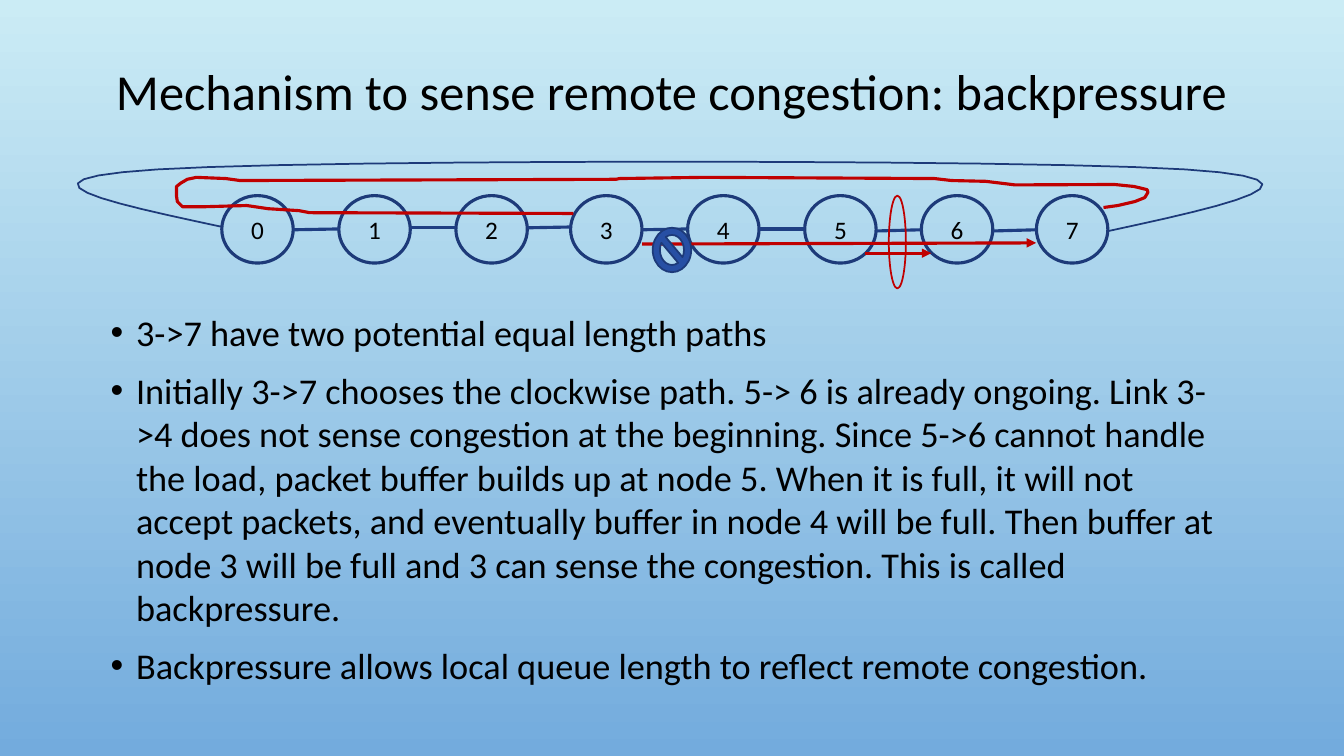
from dataclasses import dataclass

from lxml import etree
from pptx import Presentation, util as u
from pptx.dml.color import RGBColor
from pptx.enum import shapes, text
from pptx.oxml import ns

NAVY = RGBColor(0x1D, 0x3A, 0x79)
LINK_BLUE = RGBColor(0x1F, 0x3F, 0x83)
SIGN_BLUE = RGBColor(0x27, 0x4F, 0xA4)
RED = RGBColor(0xC0, 0x00, 0x00)
BLACK = RGBColor(0, 0, 0)
SKY_TOP = RGBColor(0xCB, 0xEC, 0xF5)
SKY_BOTTOM = RGBColor(0x73, 0xAB, 0xDD)

FONT = "Calibri"
THICK, THIN = 2.25, 1.25
NODE_LEFTS = [5.59, 8.54, 11.49, 14.38, 17.33, 20.28, 23.22, 26.12]
NODE_TOP, NODE_W, NODE_H = 4.93, 1.8, 1.7

Point = tuple[float, float]


@dataclass
class Box:
    left: float
    top: float
    width: float
    height: float

    def lengths(self) -> list[u.Length]:
        return [u.Cm(v) for v in (self.left, self.top, self.width, self.height)]


@dataclass
class Line:
    start: Point
    end: Point
    color: RGBColor
    arrow: bool = False


TITLE = "Mechanism to sense remote congestion: backpressure"
BULLETS = [
    "3->7 have two potential equal length paths",
    "Initially 3->7 chooses the clockwise path. 5-> 6 is already ongoing. "
    "Link 3->4 does not sense congestion at the beginning. Since 5->6 cannot "
    "handle the load, packet buffer builds up at node 5. When it is full, it "
    "will not accept packets, and eventually buffer in node 4 will be full. "
    "Then buffer at node 3 will be full and 3 can sense the congestion. "
    "This is called backpressure.",
    "Backpressure allows local queue length to reflect remote congestion.",
]

# Start and end heights of the links between neighbouring nodes
LINK_HEIGHTS = [(5.79, 5.77), (5.74, 5.74), (5.74, 5.72), (5.79, 5.77),
                (5.77, 5.77), (5.82, 5.79), (5.82, 5.79)]
FLOWS = [
    Line((16.18, 6.15), (26.11, 6.12), RED, arrow=True),
    Line((21.79, 6.38), (23.47, 6.38), RED, arrow=True),
]

WRAP_START: Point = (27.94, 5.82)
WRAP_CURVES: list[tuple[Point, Point, Point]] = [
    ((30.91, 5.18), (33.88, 4.52), (29.87, 4.27)),
    ((25.88, 4.01), (8.03, 4.01), (3.96, 4.27)),
    ((-0.08, 4.52), (2.77, 5.11), (5.61, 5.72)),
]
ALTERNATE_ROUTE: list[Point] = [
    (14.45, 5.38), (7.8, 5.36), (7.54, 5.31), (6.76, 5.26), (6.22, 5.18),
    (5.16, 5.21), (4.6, 5.21), (4.47, 5.08), (4.45, 4.95), (4.45, 4.7),
    (4.55, 4.62), (4.72, 4.52), (4.95, 4.47), (5.69, 4.5), (6.05, 4.55),
    (15.52, 4.52), (15.62, 4.5), (17.75, 4.47), (23.55, 4.5), (23.98, 4.55),
    (24.84, 4.57), (25.58, 4.66), (28.09, 4.65), (28.58, 4.7), (28.91, 4.78),
    (28.93, 4.85), (28.85, 4.98), (28.6, 5.08), (28.17, 5.18), (27.81, 5.23),
]


def style_font(p, size: float) -> None:
    p.font.name, p.font.size = FONT, u.Pt(size)
    p.font.color.rgb = BLACK


def outline(sp, color: RGBColor, width: float, fill: RGBColor | None = None) -> None:
    sp.shadow.inherit = False
    if fill is None:
        sp.fill.background()
    else:
        sp.fill.solid()
        sp.fill.fore_color.rgb = fill
    sp.line.color.rgb = color
    sp.line.width = u.Pt(width)


def add_preset(s, kind, box: Box, color: RGBColor, width: float, fill: RGBColor | None = None):
    sp = s.shapes.add_shape(kind, *box.lengths())
    outline(sp, color, width, fill)
    return sp


def add_line(s, line: Line) -> None:
    c = s.shapes.add_connector(shapes.MSO_CONNECTOR.STRAIGHT,
                               *(u.Cm(v) for v in line.start + line.end))
    c.line.color.rgb = line.color
    c.line.width = u.Pt(THICK)
    sp_pr = c._element.spPr
    if line.arrow:
        etree.SubElement(sp_pr.find(ns.qn("a:ln")), ns.qn("a:tailEnd"), type="triangle")
    etree.SubElement(sp_pr, ns.qn("a:effectLst"))


def add_route(s, points: list[Point], color: RGBColor, width: float) -> None:
    scaled = [(u.Cm(x), u.Cm(y)) for x, y in points]
    builder = s.shapes.build_freeform(*scaled[0])
    builder.add_line_segments(scaled[1:], close=False)
    outline(builder.convert_to_shape(), color, width)


def trace_curves(start: Point, curves, steps: int = 12) -> list[Point]:
    """Sample points along a chain of cubic Bezier curves."""
    points = [start]
    for a, b, end in curves:
        origin = points[-1]
        for i in range(1, steps + 1):
            t = i / steps
            weights = ((1 - t) ** 3, 3 * t * (1 - t) ** 2, 3 * t * t * (1 - t), t ** 3)
            x, y = (sum(w * v for w, v in zip(weights, axis))
                    for axis in zip(origin, a, b, end))
            points.append((x, y))
    return points


def add_text_frame(s, box: Box, anchor):
    tf = s.shapes.add_textbox(*box.lengths()).text_frame
    tf.word_wrap = True
    tf.vertical_anchor = anchor
    return tf


def add_title(s) -> None:
    p = add_text_frame(s, Box(2.54, 0.81, 28.78, 3.12), text.MSO_ANCHOR.MIDDLE).paragraphs[0]
    p.text = TITLE
    p.alignment = text.PP_ALIGN.CENTER
    p.line_spacing = 0.9
    style_font(p, 36)


def add_bullets(s) -> None:
    tf = add_text_frame(s, Box(2.54, 7.7, 28.78, 10.26), text.MSO_ANCHOR.TOP)
    for i, line in enumerate(BULLETS):
        p = tf.add_paragraph() if i else tf.paragraphs[0]
        p.text = line
        p.space_before = u.Pt(10 if i else 0)
        p_pr = p._p.get_or_add_pPr()
        p_pr.set("marL", str(u.Cm(0.64)))
        p_pr.set("indent", str(-u.Cm(0.64)))
        etree.SubElement(p_pr, ns.qn("a:buFont"), typeface="Arial")
        etree.SubElement(p_pr, ns.qn("a:buChar"), char="•")
        style_font(p, 25.9)


def add_ring(s) -> None:
    for i, left in enumerate(NODE_LEFTS):
        sp = add_preset(s, shapes.MSO_SHAPE.OVAL, Box(left, NODE_TOP, NODE_W, NODE_H), NAVY, THICK)
        sp.text_frame.vertical_anchor = text.MSO_ANCHOR.MIDDLE
        p = sp.text_frame.paragraphs[0]
        p.text = str(i)
        p.alignment = text.PP_ALIGN.CENTER
        style_font(p, 18)
    for left, following, (y1, y2) in zip(NODE_LEFTS, NODE_LEFTS[1:], LINK_HEIGHTS):
        add_line(s, Line((left + NODE_W, y1), (following, y2), LINK_BLUE))
    add_route(s, trace_curves(WRAP_START, WRAP_CURVES), NAVY, THIN)


def main() -> None:
    prs = Presentation()
    prs.slide_width, prs.slide_height = u.Cm(33.87), u.Cm(19.05)
    s = prs.slides.add_slide(prs.slide_layouts[6])
    sky = s.background.fill
    sky.gradient()
    sky.gradient_angle = 270
    for stop, color in zip(sky.gradient_stops, (SKY_TOP, SKY_BOTTOM)):
        stop.color.rgb = color

    add_title(s)
    add_bullets(s)
    add_ring(s)
    for flow in FLOWS:
        add_line(s, flow)
    add_preset(s, shapes.MSO_SHAPE.OVAL, Box(22.4, 4.93, 0.43, 2.34), RED, THIN)
    add_preset(s, shapes.MSO_SHAPE.NO_SYMBOL, Box(16.45, 5.74, 0.97, 1.12), NAVY, THIN, SIGN_BLUE)
    add_route(s, ALTERNATE_ROUTE, RED, THICK)
    prs.save("out.pptx")


if __name__ == "__main__":
    main()
